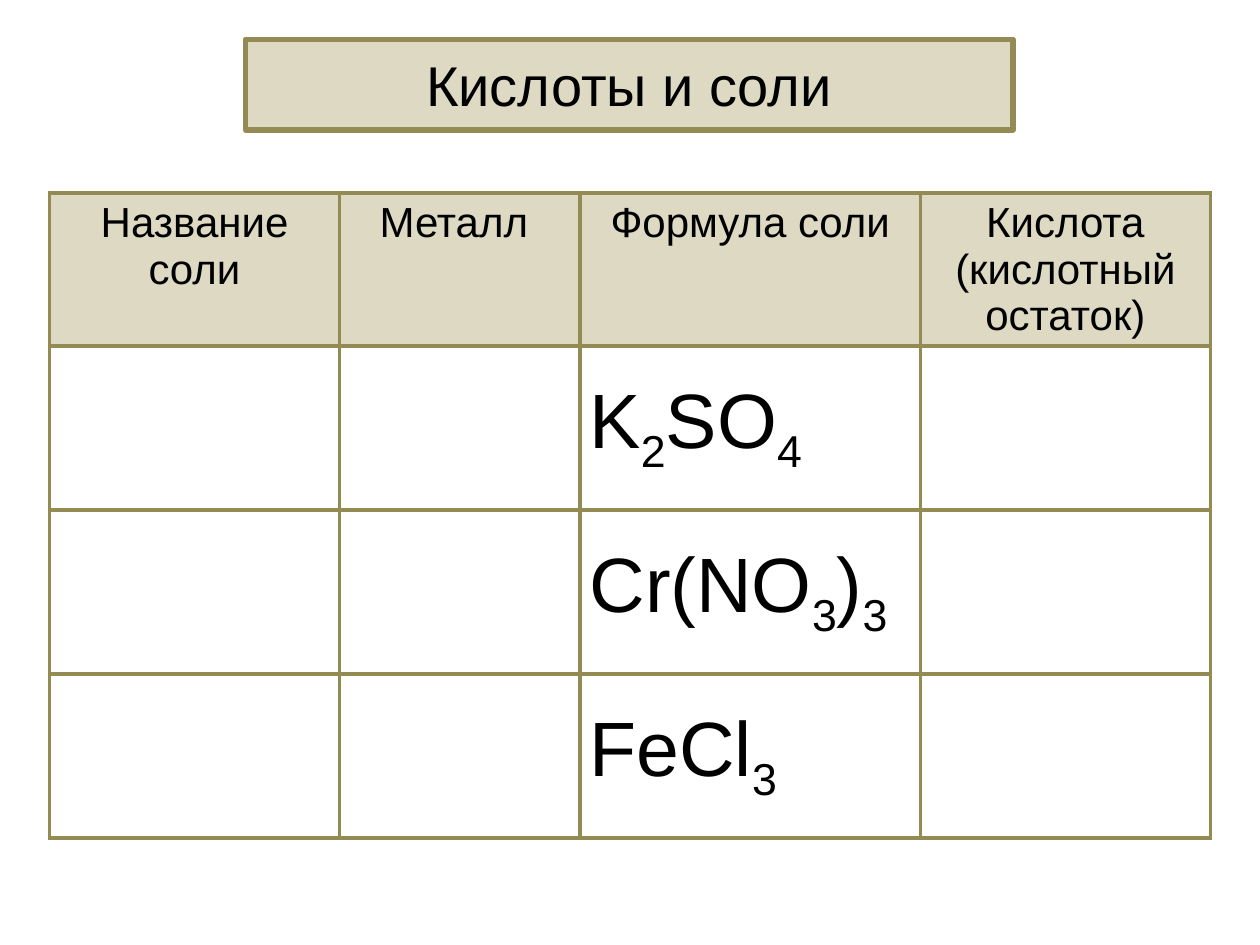
from dataclasses import dataclass
from itertools import groupby

from lxml.etree import SubElement
from pptx import Presentation
from pptx.dml.color import RGBColor
from pptx.enum.text import MSO_ANCHOR, MSO_AUTO_SIZE, PP_ALIGN
from pptx.oxml.ns import qn
from pptx.util import Cm, Pt


@dataclass(frozen=True)
class Theme:
    font: str = "Arial"
    ink: str = "000000"
    sand: str = "DDD9C3"
    olive: str = "948A54"
    title: int = 32
    head: int = 24
    body: int = 44
    frame: float = 3
    rule: float = 2.25


THEME = Theme()
HEADS = ["Название соли", "Металл ", "Формула соли", "Кислота (кислотный остаток)"]
SALTS = ["K2SO4", "Сr(NO3)3", "FeCl3"]
WIDTHS = [5.84, 4.85, 6.86, 5.84]
SALT_COL = 2
HEAD_PART = 0.237


def paint(shape, color):
    shape.fill.solid()
    shape.fill.fore_color.rgb = RGBColor.from_string(color)


def style(line, size):
    for run in line.runs:
        run.font.name = THEME.font
        run.font.size = Pt(size)
        run.font.color.rgb = RGBColor.from_string(THEME.ink)


def border(cell):
    props = cell._tc.get_or_add_tcPr()
    for side in ("a:lnL", "a:lnR", "a:lnT", "a:lnB"):
        edge = SubElement(props, qn(side), w=str(Pt(THEME.rule)))
        fill = SubElement(edge, qn("a:solidFill"))
        SubElement(fill, qn("a:srgbClr"), val=THEME.olive)


def add_title(slide, left, top, width, height):
    title = slide.shapes.title
    title.left, title.top = Cm(left), Cm(top)
    title.width, title.height = Cm(width), Cm(height)
    paint(title, THEME.sand)
    title.line.color.rgb = RGBColor.from_string(THEME.olive)
    title.line.width = Pt(THEME.frame)
    frame = title.text_frame
    frame.text = "Кислоты и соли"
    frame.auto_size = MSO_AUTO_SIZE.NONE
    frame.vertical_anchor = MSO_ANCHOR.MIDDLE
    frame.paragraphs[0].alignment = PP_ALIGN.CENTER
    style(frame.paragraphs[0], THEME.title)


def fill_head(cell, text):
    paint(cell, THEME.sand)
    cell.text_frame.text = text
    line = cell.text_frame.paragraphs[0]
    line.alignment = PP_ALIGN.CENTER
    style(line, THEME.head)


def fill_salt(cell, text):
    cell.vertical_anchor = MSO_ANCHOR.MIDDLE
    cell.margin_left = cell.margin_right = Cm(0.19)
    cell.margin_top = cell.margin_bottom = 0
    line = cell.text_frame.paragraphs[0]
    for digit, part in groupby(text, str.isdigit):
        run = line.add_run()
        run.text = "".join(part)
        if digit:
            run.font._element.set("baseline", "-25000")
    style(line, THEME.body)


def add_grid(slide, left, top, width, height):
    table = slide.shapes.add_table(
        len(SALTS) + 1, len(HEADS), Cm(left), Cm(top), Cm(width), Cm(height)
    ).table
    table.first_row = table.horz_banding = False
    for col, part in zip(table.columns, WIDTHS):
        col.width = Cm(width * part / sum(WIDTHS))
    head = height * HEAD_PART
    for num, row in enumerate(table.rows):
        row.height = Cm(head if num == 0 else (height - head) / len(SALTS))
    for cell in table.iter_cells():
        border(cell)
        cell.fill.background()
    for col, text in enumerate(HEADS):
        fill_head(table.cell(0, col), text)
    for row, text in enumerate(SALTS, 1):
        fill_salt(table.cell(row, SALT_COL), text)


def main():
    deck = Presentation()
    deck.slide_width, deck.slide_height = Cm(25.4), Cm(19.05)
    slide = deck.slides.add_slide(deck.slide_layouts[5])
    add_title(slide, 4.95, 0.79, 15.47, 1.83)
    add_grid(slide, 1, 3.89, 23.4, 13)
    deck.save("out.pptx")


if __name__ == "__main__":
    main()
